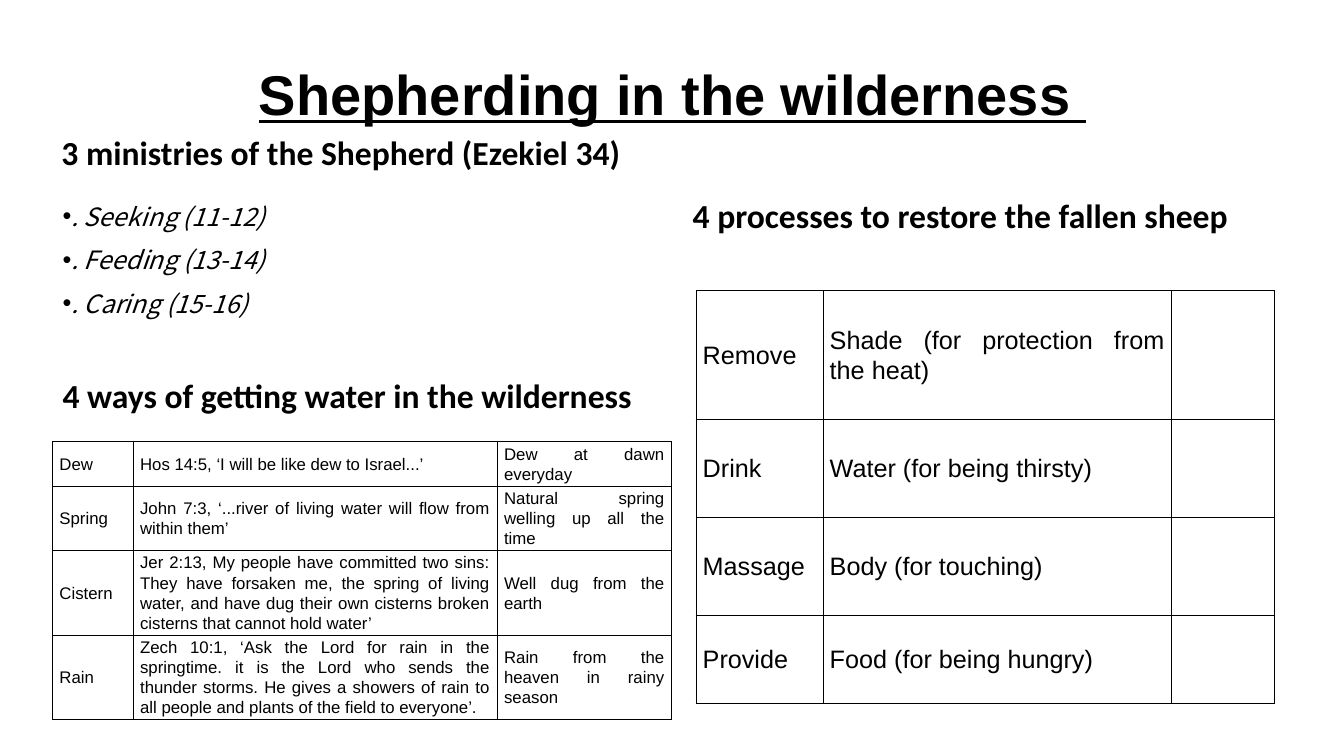
from lxml.etree import SubElement
from pptx import Presentation
from pptx.dml.color import RGBColor
from pptx.enum.text import MSO_ANCHOR as Anchor, MSO_AUTO_SIZE as Fit, PP_ALIGN as Align
from pptx.oxml.ns import qn
from pptx.util import Inches, Pt

INK = "000000"
WATER = [
    ("Dew ", "Hos 14:5, ‘I will be like dew to Israel...’", "Dew at dawn everyday"),
    ("Spring", "John 7:3, ‘...river of living water will flow from within them’",
     "Natural spring welling up all the time"),
    ("Cistern", "Jer 2:13, My people have committed two sins: They have forsaken me, "
     "the spring of living water, and have dug their own cisterns broken cisterns "
     "that cannot hold water’", "Well dug from the earth"),
    ("Rain", "Zech 10:1, ‘Ask the Lord for rain in the springtime. it is the Lord who "
     "sends the thunder storms. He gives a showers of rain to all people and plants "
     "of the field to everyone’.", "Rain from the heaven in rainy season"),
]
SHEEP = [
    ("Remove", "Shade (for protection from the heat)", ""),
    ("Drink ", "Water (for being thirsty)", ""),
    ("Massage", "Body (for touching)", ""),
    ("Provide", "Food (for being hungry)", ""),
]
DUTIES = [". Seeking (11-12)", ". Feeding (13-14)", ". Caring (15-16)"]


def color(text):
    return RGBColor.from_string(text)


def style(para, size, face="Arial", bold=False, italic=False, line=False):
    for run in para.runs:
        font = run.font
        font.size, font.name = Pt(size), face
        font.bold, font.italic, font.underline = bold, italic, line
        font.color.rgb = color(INK)


def place(shape, box, anchor):
    shape.left, shape.top, shape.width, shape.height = map(Inches, box)
    frame = shape.text_frame
    frame.word_wrap, frame.auto_size = True, Fit.NONE
    frame.vertical_anchor = anchor
    return frame


def title(shape, box, text):
    frame = place(shape, box, Anchor.MIDDLE)
    frame.text = text
    para = frame.paragraphs[0]
    para.alignment = Align.CENTER
    style(para, 40, bold=True, line=True)


def header(shape, box, text):
    frame = place(shape, box, Anchor.BOTTOM)
    frame.text = text
    style(frame.paragraphs[0], 24, "Calibri", bold=True)


def duties(shape, box, items, head):
    frame = place(shape, box, Anchor.TOP)
    frame.margin_top = Inches(0.47)
    frame.text = "\n".join(items + [head])
    for para in frame.paragraphs:
        para.alignment = Align.JUSTIFY
        para.space_before, para.space_after = Pt(0), Pt(8)
        props = para._p.get_or_add_pPr()
        props.set("marL", "0")
        props.set("indent", "0")
        if para.text == head:
            para.line_spacing, para.space_before = 1.07, Pt(30.5)
            SubElement(props, qn("a:buNone"))
            style(para, 24, "Calibri", bold=True)
        else:
            para.line_spacing = Pt(23.2)
            SubElement(props, qn("a:buChar")).set("char", "•")
            style(para, 18, "Noto Sans CJK KR", italic=True)


def border(cell):
    props = cell._tc.get_or_add_tcPr()
    for spot, side in enumerate(("lnL", "lnR", "lnT", "lnB")):
        line = SubElement(props, qn("a:" + side))
        line.set("w", str(Pt(0.28)))
        fill = SubElement(line, qn("a:solidFill"))
        SubElement(fill, qn("a:srgbClr")).set("val", INK)
        props.insert(spot, line)


def grid(slide, left, top, cols, rows, data, size):
    box = (left, top, sum(cols), sum(rows))
    table = slide.shapes.add_table(len(rows), len(cols), *map(Inches, box)).table
    table.first_row = table.horz_banding = False
    for col, width in zip(table.columns, cols):
        col.width = Inches(width)
    for row, height, words in zip(table.rows, rows, data):
        row.height = Inches(height)
        for cell, text in zip(row.cells, words):
            cell.fill.background()
            border(cell)
            cell.vertical_anchor = Anchor.MIDDLE
            cell.margin_left = cell.margin_right = Inches(0.07)
            cell.margin_top = cell.margin_bottom = Inches(0.02)
            cell.text = text
            para = cell.text_frame.paragraphs[0]
            para.alignment, para.line_spacing = Align.JUSTIFY, 1.07
            style(para, size)


def main():
    deck = Presentation()
    deck.slide_width, deck.slide_height = Inches(13.33), Inches(7.5)
    slide = deck.slides.add_slide(deck.slide_layouts.get_by_name("Comparison"))
    name, left, body, right, spare = list(slide.placeholders)[:5]
    spare.element.getparent().remove(spare.element)

    # Title
    title(name, (0.67, 0.3, 12, 1.25), "Shepherding in the wilderness ")

    # Left: ministries and water
    header(left, (0.51, 0.93, 5.89, 0.83), "3 ministries of the Shepherd (Ezekiel 34)")
    duties(body, (0.52, 1.5, 6.06, 4.32), DUTIES,
           "4 ways of getting water in the wilderness")
    grid(slide, 0.52, 4.38, (0.8, 3.61, 1.73), (0.44, 0.63, 0.84, 0.84), WATER, 12)

    # Right: restoring the sheep
    header(right, (6.77, 1.68, 5.89, 0.7), "4 processes to restore the fallen sheep")
    grid(slide, 6.9, 2.88, (1.26, 3.46, 1.02), (1.28, 0.97, 0.97, 0.88), SHEEP, 18)

    deck.save("out.pptx")


if __name__ == "__main__":
    main()
